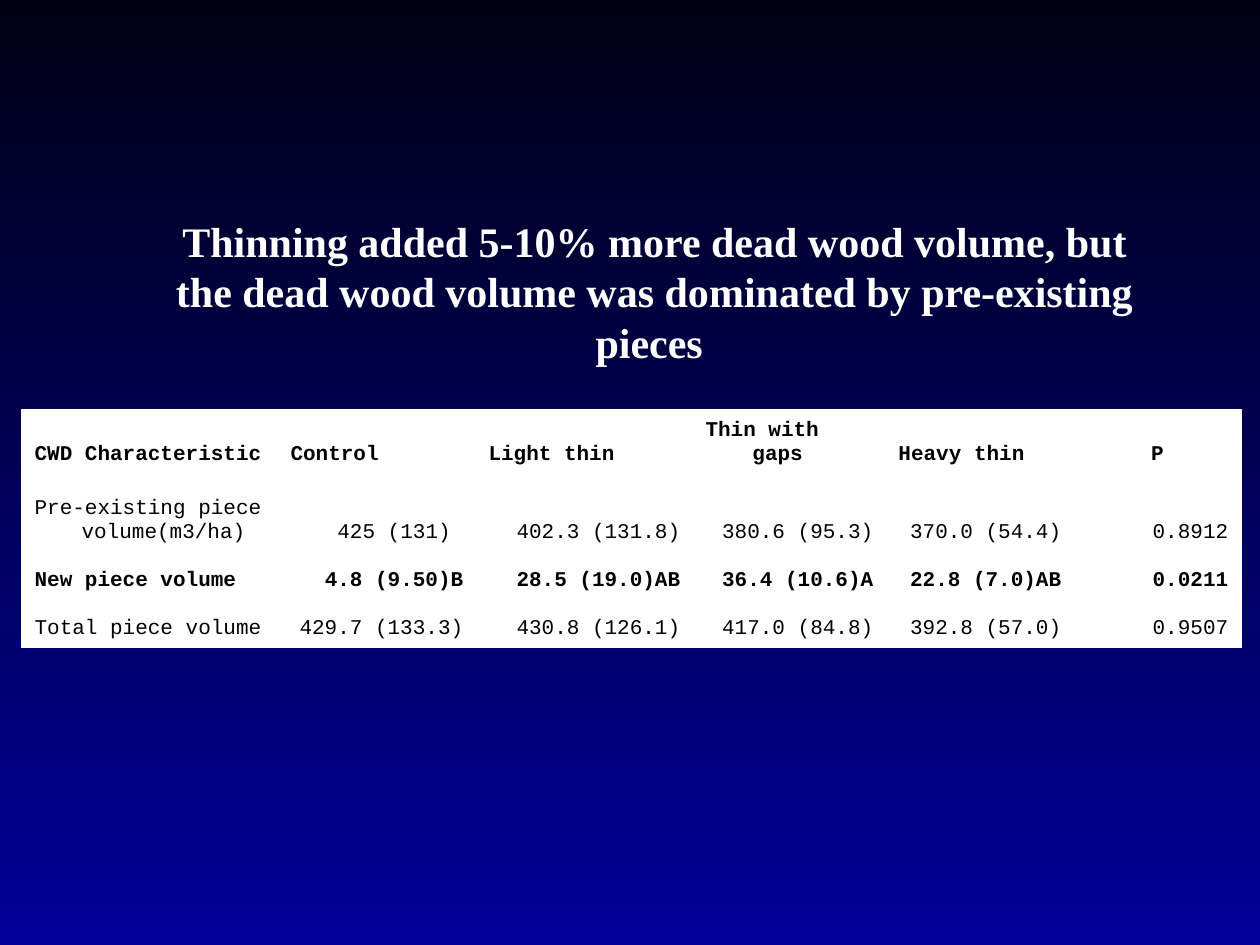
from pptx import Presentation
from pptx import util as u
from pptx.dml.color import RGBColor
from pptx.enum import text

PX = u.Inches(1) / 126
NIGHT = RGBColor(0x00, 0x00, 0x14)
BLUE = RGBColor(0x00, 0x00, 0x99)
WHITE = RGBColor(0xFF, 0xFF, 0xFF)
BLACK = RGBColor(0x00, 0x00, 0x00)
LEFT, CENTER, RIGHT = text.PP_ALIGN.LEFT, text.PP_ALIGN.CENTER, text.PP_ALIGN.RIGHT


def px(length):
    return u.Emu(round(length * PX))


def add_run(para, words, font, size, color, bold):
    span = para.add_run()
    span.text = words
    span.font.name = font
    span.font.size = u.Pt(size)
    span.font.color.rgb = color
    span.font.bold = bold


deck = Presentation()
deck.slide_width, deck.slide_height = px(1260), px(945)
page = deck.slides.add_slide(deck.slide_layouts[5])

backdrop = page.background.fill
backdrop.gradient()
backdrop.gradient_angle = 270
for stop, color, position in zip(backdrop.gradient_stops, (NIGHT, BLUE), (0, 1)):
    stop.color.rgb = color
    stop.position = position

title = page.shapes.title
title.left, title.top, title.width, title.height = px(150), px(209), px(1009), px(164)
box = title.text_frame
box.word_wrap = True
box.auto_size = text.MSO_AUTO_SIZE.SHAPE_TO_FIT_TEXT
box.vertical_anchor = text.MSO_ANCHOR.TOP
para = box.paragraphs[0]
para.alignment = CENTER
add_run(
    para,
    "Thinning added 5-10% more dead wood volume, but the dead wood volume "
    "was dominated by pre-existing pieces ",
    "Times New Roman", 24, WHITE, True,
)

rows = [
    ["CWD Characteristic", "Control", "Light thin", "Thin with gaps", "Heavy thin", "P"],
    ["Pre-existing piece volume(m3/ha)", "425 (131) ", "402.3 (131.8)",
     "380.6 (95.3)", "370.0 (54.4)", "0.8912"],
    ["New piece volume", "4.8 (9.50)B", "28.5 (19.0)AB",
     "36.4 (10.6)A", "22.8 (7.0)AB", "0.0211"],
    ["Total piece volume", "429.7 (133.3)", "430.8 (126.1)",
     "417.0 (84.8)", "392.8 (57.0)", "0.9507"],
]
column_widths = [256, 198, 217, 193, 188, 167]
row_heights = [58, 78, 48, 48]
bold_rows = (0, 2)

frame = page.shapes.add_table(
    len(rows), len(column_widths), px(22), px(410),
    px(sum(column_widths)), px(sum(row_heights)),
)
table = frame.table
table.first_row = False
table.horz_banding = False
for column, width in zip(table.columns, column_widths):
    column.width = px(width)
for row, height in zip(table.rows, row_heights):
    row.height = px(height)

for row_index, values in enumerate(rows):
    for column_index, value in enumerate(values):
        cell = table.cell(row_index, column_index)
        cell.fill.solid()
        cell.fill.fore_color.rgb = WHITE
        cell.vertical_anchor = text.MSO_ANCHOR.BOTTOM
        para = cell.text_frame.paragraphs[0]
        if row_index == 0:
            para.alignment = CENTER if value == "P" else LEFT
        else:
            para.alignment = RIGHT if column_index else LEFT
        properties = para._p.get_or_add_pPr()
        properties.set("marL", str(px(47)))
        properties.set("indent", str(-px(47)))
        add_run(para, value, "Courier New", 12, BLACK, row_index in bold_rows)

deck.save("out.pptx")
